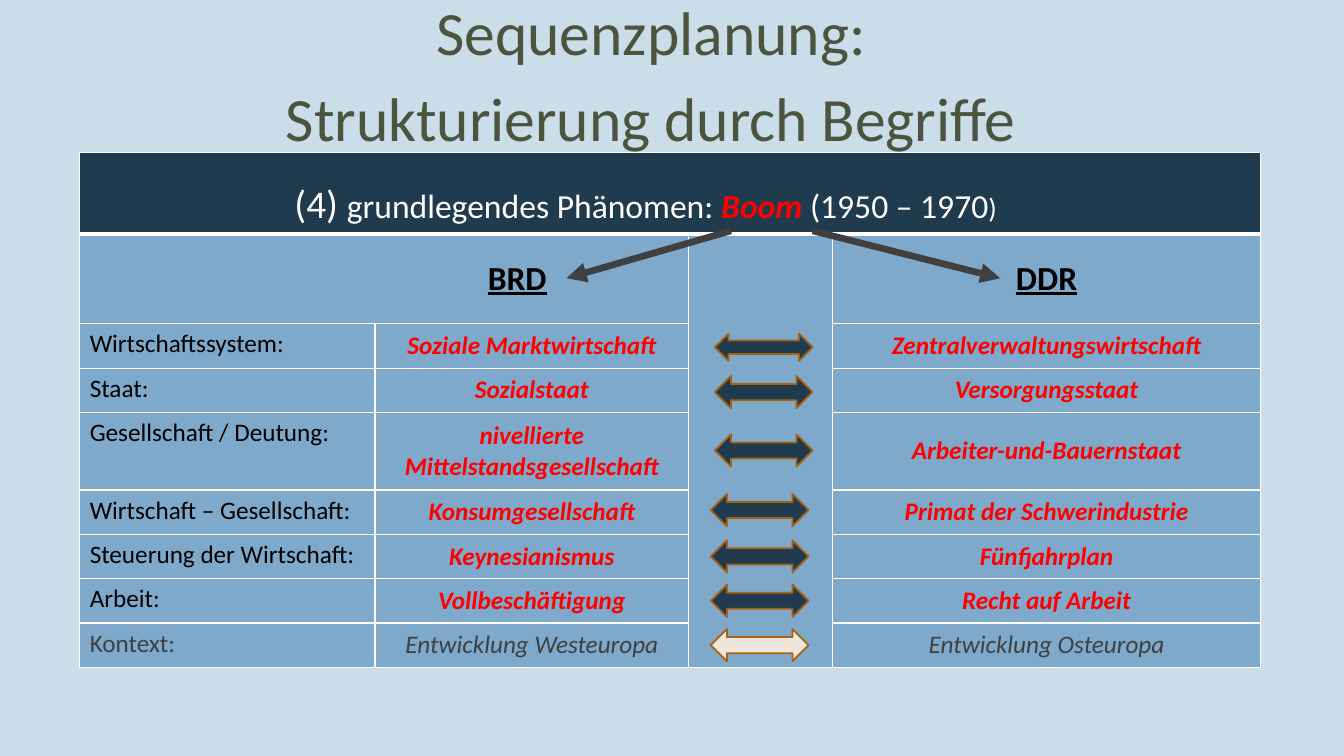
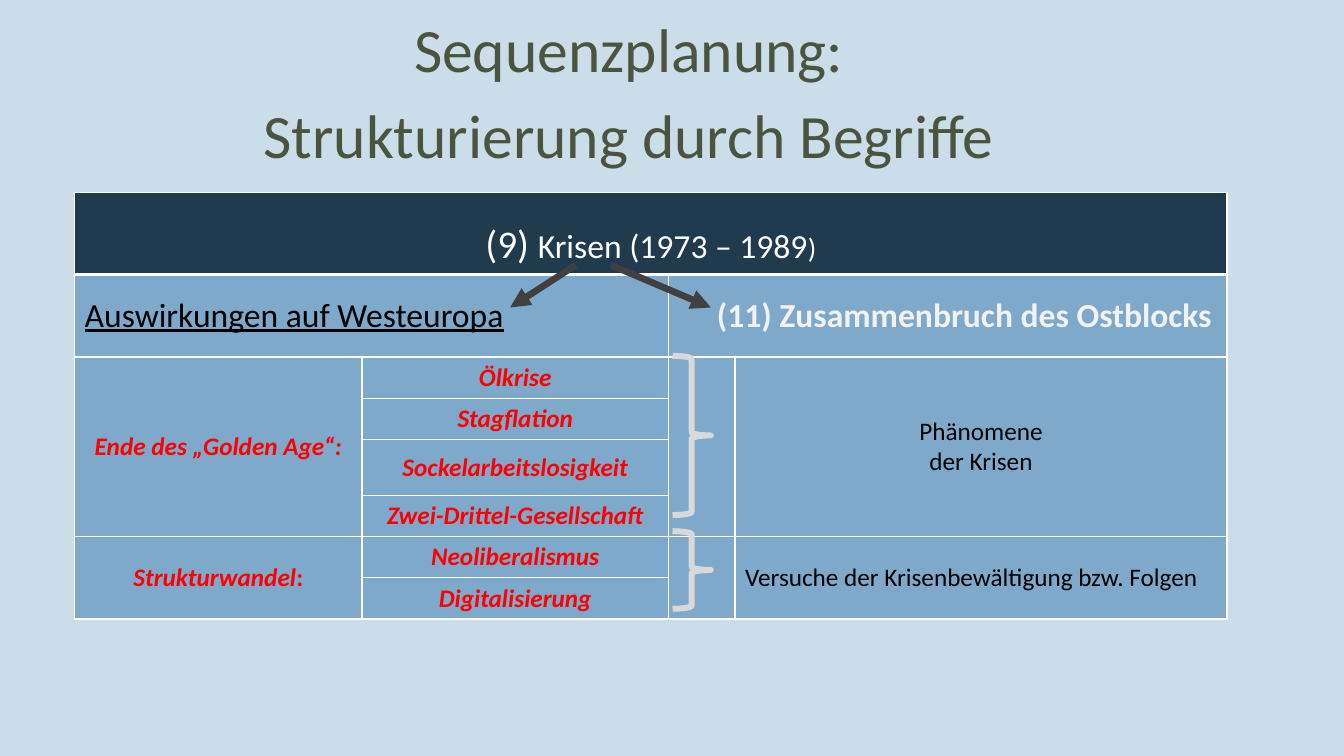
"""Build two slides on the economic history of divided Germany."""
import lxml.etree
import pptx
import pptx.dml.color
import pptx.enum.shapes
import pptx.enum.text
import pptx.oxml.ns
import pptx.util

Inches = pptx.util.Inches
Pt = pptx.util.Pt
ALIGN = pptx.enum.text.PP_ALIGN
ANCHOR = pptx.enum.text.MSO_ANCHOR
SHAPE = pptx.enum.shapes.MSO_SHAPE

FONT = "Calibri"
BACKGROUND = "CCDDEA"
NAVY = "203A4E"
BLUE = "7EA9CA"
WHITE = "FFFFFF"
DARK_GREY = "404040"
LIGHT_GREY = "D9D9D9"
SAND = "ECE6DD"
BROWN = "A9610D"

STYLES = {
    "title": dict(color="4A543E", size=Pt(44)),
    "number": dict(color=WHITE, size=Pt(28)),
    "header": dict(color=WHITE, size=Pt(24)),
    "closing": dict(color=WHITE, size=Pt(20)),
    "key": dict(color="FF0000", size=Pt(24), bold=True, italic=True),
    "side": dict(color="000000", size=Pt(24), bold=True, underline=True),
    "effects": dict(color="000000", size=Pt(24), underline=True),
    "collapse": dict(color="F2F2F2", size=Pt(24), bold=True),
    "label": dict(color="000000", size=Pt(18)),
    "term": dict(color="FF0000", size=Pt(18), bold=True, italic=True),
    "colon": dict(color="FF0000", size=Pt(18), bold=True),
    "context": dict(color=DARK_GREY, size=Pt(18)),
    "region": dict(color=DARK_GREY, size=Pt(18), italic=True),
}
TITLE_LINES = ["Sequenzplanung:", "Strukturierung durch Begriffe"]
BOOM_ROWS = [
    ("Wirtschaftssystem:", "Soziale Marktwirtschaft", "Zentralverwaltungswirtschaft"),
    ("Staat:", "Sozialstaat", "Versorgungsstaat"),
    ("Gesellschaft / Deutung:", "nivellierte Mittelstandsgesellschaft",
     "Arbeiter-und-Bauernstaat"),
    ("Wirtschaft – Gesellschaft:", "Konsumgesellschaft", "Primat der Schwerindustrie"),
    ("Steuerung der Wirtschaft:", "Keynesianismus", "Fünfjahrplan"),
    ("Arbeit:", "Vollbeschäftigung", "Recht auf Arbeit"),
    ("Kontext:", "Entwicklung Westeuropa", "Entwicklung Osteuropa"),
]
CRISIS_TERMS = ["Ölkrise", "Stagflation", "Sockelarbeitslosigkeit",
                "Zwei-Drittel-Gesellschaft", "Neoliberalismus", "Digitalisierung"]


def rgb(code):
    """Return the colour for a hex string."""
    return pptx.dml.color.RGBColor.from_string(code)


def set_format(target, values):
    """Set every attribute named in a dict of format values."""
    for name, value in values.items():
        setattr(target, name, value)


def add_element(parent, tag, **attributes):
    """Append a drawing element to a parent element."""
    return lxml.etree.SubElement(parent, pptx.oxml.ns.qn(tag), attributes)


def write_spans(para, spans):
    """Write (text, style name) pairs into a paragraph."""
    for text, style in spans:
        span = para.add_run()
        span.text = text
        values = dict(name=FONT, bold=False, italic=False, underline=False)
        values.update(STYLES[style])
        span.font.color.rgb = rgb(values.pop("color"))
        set_format(span.font, values)


def add_page(deck, left, top, height):
    """Add a slide with the shared two-line title."""
    page = deck.slides.add_slide(deck.slide_layouts[5])
    title = page.shapes.title
    set_format(title, dict(left=Inches(left), top=Inches(top),
                           width=Inches(11), height=Inches(height)))
    frame = title.text_frame
    set_format(frame, dict(margin_left=0, margin_right=0, margin_top=Inches(0.05),
                           margin_bottom=Inches(0.05), word_wrap=True,
                           auto_size=pptx.enum.text.MSO_AUTO_SIZE.NONE,
                           vertical_anchor=ANCHOR.TOP))
    for index, line in enumerate(TITLE_LINES):
        para = frame.add_paragraph() if index else frame.paragraphs[0]
        set_format(para, dict(alignment=ALIGN.CENTER, line_spacing=0.9,
                              space_before=Pt(12), space_after=Pt(2)))
        write_spans(para, [(line, "title")])
    return page


def style_cell(cell, row):
    """Give a cell its white borders and its fill."""
    properties = cell._tc.get_or_add_tcPr()
    thick = {0: "a:lnB", 1: "a:lnT"}.get(row)
    for tag in ("a:lnL", "a:lnR", "a:lnT", "a:lnB"):
        line = add_element(properties, tag, w=str(Pt(3 if tag == thick else 1)))
        add_element(add_element(line, "a:solidFill"), "a:srgbClr", val=WHITE)
    cell.fill.solid()
    cell.fill.fore_color.rgb = rgb(BLUE if row else NAVY)


def add_grid(page, left, top, widths, heights, merges):
    """Add a styled table and merge the given cell ranges."""
    grid = page.shapes.add_table(len(heights), len(widths), Inches(left), Inches(top),
                                 Inches(sum(widths)), Inches(sum(heights))).table
    set_format(grid, dict(first_row=False, horz_banding=False))
    for column, width in zip(grid.columns, widths):
        column.width = Inches(width)
    for index, (row, height) in enumerate(zip(grid.rows, heights)):
        row.height = Inches(height)
        for cell in row.cells:
            style_cell(cell, index)
    for first, last in merges:
        grid.cell(*first).merge(grid.cell(*last))
    return grid


def fill_cell(cell, *lines, align=ALIGN.CENTER, anchor=ANCHOR.MIDDLE, indent=0.1):
    """Write lines of spans into a table cell."""
    set_format(cell, dict(vertical_anchor=anchor, margin_left=Inches(indent)))
    for index, spans in enumerate(lines):
        frame = cell.text_frame
        para = frame.add_paragraph() if index else frame.paragraphs[0]
        para.alignment = align
        write_spans(para, spans)


def fill_header(cell, spans, **options):
    """Write the widely spaced header line of a table."""
    fill_cell(cell, spans, **options)
    set_format(cell.text_frame.paragraphs[0],
               dict(line_spacing=1.5, space_before=Pt(12), space_after=Pt(12)))


def add_pointer(page, start, end):
    """Add a thick line with an arrowhead at its end."""
    pointer = page.shapes.add_connector(pptx.enum.shapes.MSO_CONNECTOR.STRAIGHT,
                                        *map(Inches, start + end))
    pointer.line.color.rgb = rgb(DARK_GREY)
    pointer.line.width = Pt(4.75)
    add_element(pointer.line._get_or_add_ln(), "a:tailEnd", type="triangle")
    add_element(pointer._element.spPr, "a:effectLst")


def add_symbol(page, kind, at, line, weight, fill=None):
    """Add an outlined preset shape, filled if a colour is given."""
    symbol = page.shapes.add_shape(kind, *map(Inches, at))
    symbol.shadow.inherit = False
    symbol.line.color.rgb = rgb(line)
    symbol.line.width = Pt(weight)
    if fill:
        symbol.fill.solid()
        symbol.fill.fore_color.rgb = rgb(fill)
    else:
        symbol.fill.background()


def build_boom(deck):
    """Build the slide that compares both states in the boom years."""
    page = add_page(deck, 0.96, -0.03, 1.47)
    heights = [0.81, 0.89] + [0.77 if row[0].startswith("Gesellschaft") else 0.44
                              for row in BOOM_ROWS]
    grid = add_grid(page, 0.79, 1.51, [2.93, 3.11, 1.43, 4.24], heights,
                    [((0, 0), (0, 3)), ((1, 0), (1, 1)), ((1, 2), (8, 2))])
    fill_header(grid.cell(0, 0), [
        ("(4) ", "number"), ("grundlegendes Phänomen: ", "header"), ("Boom ", "key"),
        ("(1950 – 1970", "header"), (")", "closing")], align=ALIGN.LEFT, indent=2.13)
    fill_cell(grid.cell(1, 0), [("BRD", "side")], indent=2.74)
    fill_cell(grid.cell(1, 3), [("DDR", "side")])
    for row, (label, west, east) in enumerate(BOOM_ROWS, 2):
        is_context = label == "Kontext:"
        fill_cell(grid.cell(row, 0), [(label, "context" if is_context else "label")],
                  align=ALIGN.LEFT, anchor=ANCHOR.TOP)
        for column, text in ((1, west), (3, east)):
            fill_cell(grid.cell(row, column), [(text, "region" if is_context else "term")])
    add_pointer(page, (7.25, 2.29), (5.62, 2.76))
    add_pointer(page, (8.06, 2.29), (9.92, 2.76))
    tops = [3.31, 3.73, 4.31, 4.9, 5.36, 5.8, 6.24]
    for index, top in enumerate(tops):
        at = (7.09 if index < 3 else 7.05, top, 0.97, 0.32 if index else 0.27)
        add_symbol(page, SHAPE.LEFT_RIGHT_ARROW, at, BROWN, 1.25,
                   SAND if top == tops[-1] else NAVY)


def build_crises(deck):
    """Build the slide on the crises and their effects."""
    page = add_page(deck, 0.74, 0.14, 1.61)
    heights = [0.8, 0.82, 0.41, 0.41, 0.55, 0.41, 0.41, 0.41]
    merges = [((0, 0), (0, 3)), ((1, 0), (1, 1)), ((1, 2), (1, 3))]
    merges += [((first, column), (last, column))
               for first, last in ((2, 5), (6, 7)) for column in (0, 2, 3)]
    grid = add_grid(page, 0.74, 1.91, [2.85, 3.04, 0.66, 4.88], heights, merges)
    fill_header(grid.cell(0, 0), [("(9) ", "number"), ("Krisen (1973 – 1989", "header"),
                                  (")", "closing")])
    fill_cell(grid.cell(1, 0), [("Auswirkungen auf Westeuropa", "effects")],
              align=ALIGN.LEFT)
    fill_cell(grid.cell(1, 2), [("(11) Zusammenbruch des Ostblocks", "collapse")],
              align=ALIGN.LEFT, indent=0.48)
    fill_cell(grid.cell(2, 0), [("Ende des „Golden Age“:", "term")])
    fill_cell(grid.cell(6, 0), [("Strukturwandel", "term"), (":", "colon")])
    for row, term in enumerate(CRISIS_TERMS, 2):
        fill_cell(grid.cell(row, 1), [(term, "term")])
    fill_cell(grid.cell(2, 3), [("Phänomene", "label")], [("der Krisen", "label")])
    fill_cell(grid.cell(6, 3), [("Versuche der Krisenbewältigung bzw. Folgen", "label")],
              align=ALIGN.LEFT)
    add_pointer(page, (5.71, 2.63), (5.06, 3.05))
    add_pointer(page, (6.06, 2.63), (7.05, 3.05))
    for top, height in ((3.53, 1.58), (5.27, 0.77)):
        add_symbol(page, SHAPE.RIGHT_BRACE, (6.67, top, 0.38, height), LIGHT_GREY, 4.25)


def main():
    """Build the deck and save it."""
    deck = pptx.Presentation()
    set_format(deck, dict(slide_width=Inches(13.33), slide_height=Inches(7.5)))
    background = deck.slide_master.background.fill
    background.solid()
    background.fore_color.rgb = rgb(BACKGROUND)
    build_boom(deck)
    build_crises(deck)
    deck.save("out.pptx")


if __name__ == "__main__":
    main()
